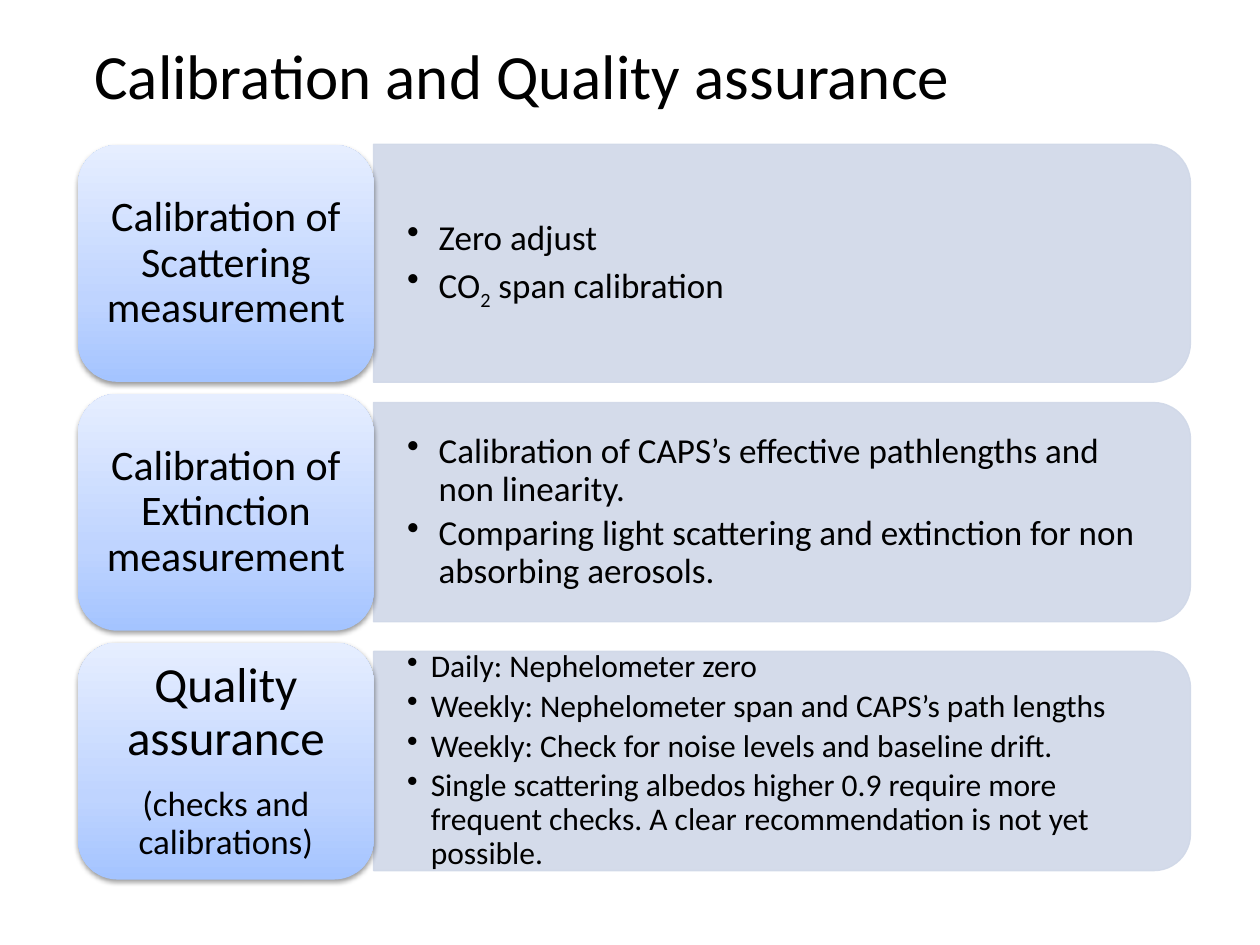
"""Build the calibration and quality assurance slide."""
from dataclasses import dataclass

import lxml.etree
import pptx
import pptx.dml.color
import pptx.enum.shapes
import pptx.enum.text
import pptx.oxml.ns
import pptx.util

Pt = pptx.util.Pt
RGB = pptx.dml.color.RGBColor.from_string
SHAPE = pptx.enum.shapes.MSO_SHAPE
ALIGN = pptx.enum.text.PP_ALIGN
qn = pptx.oxml.ns.qn


@dataclass(frozen=True)
class Theme:
    font: str = "Calibri"
    text: str = "000000"
    panel: str = "D0D8E8"
    panel_alpha: int = 90000
    card_stops: tuple = ((0, "A4C4FF"), (35000, "BFD4FF"), (100000, "E6EEFF"))
    title_size: float = 36
    heading_size: float = 24
    large_size: float = 28
    body_size: float = 20
    small_size: float = 18


@dataclass(frozen=True)
class Run:
    text: str
    size: float
    baseline: int = 0


@dataclass(frozen=True)
class Box:
    left: float
    top: float
    width: float
    height: float

    def lengths(self) -> tuple:
        return Pt(self.left), Pt(self.top), Pt(self.width), Pt(self.height)


@dataclass(frozen=True)
class Row:
    heading: list[list[Run]]
    bullets: list[list[Run]]
    panel_height: float
    bullet_indent: float
    heading_inset: float = 7.2


THEME = Theme()
CARD_LEFT, CARD_WIDTH, CARD_HEIGHT = 44.6, 169, 135.4
CARD_PAD = 6.6
PANEL_LEFT, PANEL_WIDTH, PANEL_PAD = 213.5, 466.8, 6.4
FIRST_CENTER, ROW_PITCH = 150.5, 142.2

ROWS = [
    Row([[Run("Calibration of Scattering measurement", THEME.heading_size)]],
        [[Run("Zero adjust", THEME.body_size)],
         [Run("CO", THEME.body_size), Run("2", THEME.body_size, -25000),
          Run(" span calibration", THEME.body_size)]],
        136, 18),
    Row([[Run("Calibration of Extinction measurement", THEME.heading_size)]],
        [[Run("Calibration of CAPS’s effective pathlengths and non linearity.", THEME.body_size)],
         [Run("Comparing light scattering and extinction for non absorbing aerosols.",
              THEME.body_size)]],
        125.3, 18),
    Row([[Run("Quality assurance", THEME.large_size)],
         [Run("(checks and calibrations)", THEME.body_size)]],
        [[Run(text, THEME.small_size)] for text in (
            "Daily: Nephelometer zero",
            "Weekly: Nephelometer span and CAPS’s path lengths",
            "Weekly: Check for noise levels and baseline drift.",
            "Single scattering albedos higher 0.9 require more frequent checks. "
            "A clear recommendation is not yet possible.")],
        125.3, 13.5, 8.6),
]


def add_run(p, run: Run) -> None:
    r = p.add_run()
    r.text = run.text
    r.font.name = THEME.font
    r.font.size = Pt(run.size)
    r.font.color.rgb = RGB(THEME.text)
    if run.baseline:
        r.font._element.set("baseline", str(run.baseline))


def add_text(s, box: Box, paragraphs: list[list[Run]], inset: float,
             space_ratio: float, bullet_indent: float = 0) -> None:
    tf = s.shapes.add_textbox(*box.lengths()).text_frame
    tf.word_wrap = True
    tf.vertical_anchor = pptx.enum.text.MSO_ANCHOR.MIDDLE
    tf.margin_left = tf.margin_right = Pt(inset)
    tf.margin_top = tf.margin_bottom = Pt(inset / 2)
    for i, runs in enumerate(paragraphs):
        p = tf.add_paragraph() if i else tf.paragraphs[0]
        p.line_spacing = 0.9
        p.space_after = Pt(round(runs[0].size * space_ratio, 1))
        p.alignment = ALIGN.LEFT if bullet_indent else ALIGN.CENTER
        if bullet_indent:
            p.level = 1
            pPr = p._p.get_or_add_pPr()
            pPr.set("marL", str(Pt(bullet_indent)))
            pPr.set("indent", str(-Pt(bullet_indent)))
            lxml.etree.SubElement(pPr, qn("a:buChar"), char="•")
        for run in runs:
            add_run(p, run)


def add_panel(s, center: float, height: float) -> None:
    middle = PANEL_LEFT + PANEL_WIDTH / 2
    box = Box(middle - height / 2, center - PANEL_WIDTH / 2, height, PANEL_WIDTH)
    sp = s.shapes.add_shape(SHAPE.ROUND_2_SAME_RECTANGLE, *box.lengths())
    sp.rotation = 90
    sp.shadow.inherit = False
    sp.fill.solid()
    sp.fill.fore_color.rgb = sp.line.color.rgb = RGB(THEME.panel)
    sp.line.width = Pt(0.75)
    for color in sp._element.spPr.iter(qn("a:srgbClr")):
        lxml.etree.SubElement(color, qn("a:alpha"), val=str(THEME.panel_alpha))


def add_card(s, box: Box) -> None:
    sp = s.shapes.add_shape(SHAPE.ROUNDED_RECTANGLE, *box.lengths())
    sp.line.fill.background()
    sp.fill.gradient()
    sp.fill.gradient_angle = 90
    spPr = sp._element.spPr
    stops = spPr.find(".//" + qn("a:gsLst"))
    for stop in list(stops):
        stops.remove(stop)
    for position, color in THEME.card_stops:
        stop = lxml.etree.SubElement(stops, qn("a:gs"), pos=str(position))
        lxml.etree.SubElement(stop, qn("a:srgbClr"), val=color)
    sp.shadow.inherit = False
    shadow = lxml.etree.SubElement(
        spPr.find(qn("a:effectLst")), qn("a:outerShdw"), blurRad=str(Pt(3.1)),
        dist=str(Pt(1.6)), dir="5400000", rotWithShape="0")
    color = lxml.etree.SubElement(shadow, qn("a:srgbClr"), val=THEME.text)
    lxml.etree.SubElement(color, qn("a:alpha"), val="38000")


def add_row(s, row: Row, center: float) -> None:
    add_panel(s, center, row.panel_height)
    text_height = row.panel_height - 2 * PANEL_PAD
    add_text(s, Box(PANEL_LEFT, center - text_height / 2, PANEL_WIDTH - PANEL_PAD, text_height),
             row.bullets, 19.2, 0.18, row.bullet_indent)
    card = Box(CARD_LEFT, center - CARD_HEIGHT / 2, CARD_WIDTH, CARD_HEIGHT)
    add_card(s, card)
    add_text(s, Box(card.left + CARD_PAD, card.top + CARD_PAD,
                    card.width - 2 * CARD_PAD, card.height - 2 * CARD_PAD),
             row.heading, row.heading_inset, 0.42)


def add_title(s) -> None:
    tf = s.shapes.add_textbox(*Box(46.8, 17.3, 507.6, 51).lengths()).text_frame
    tf.word_wrap = False
    tf.auto_size = pptx.enum.text.MSO_AUTO_SIZE.SHAPE_TO_FIT_TEXT
    add_run(tf.paragraphs[0], Run("Calibration and Quality assurance", THEME.title_size))


def main() -> None:
    prs = pptx.Presentation()
    prs.slide_width, prs.slide_height = Pt(720), Pt(540)
    s = prs.slides.add_slide(prs.slide_layouts[6])
    add_title(s)
    for i, row in enumerate(ROWS):
        add_row(s, row, FIRST_CENTER + i * ROW_PITCH)
    prs.save("out.pptx")


if __name__ == "__main__":
    main()
